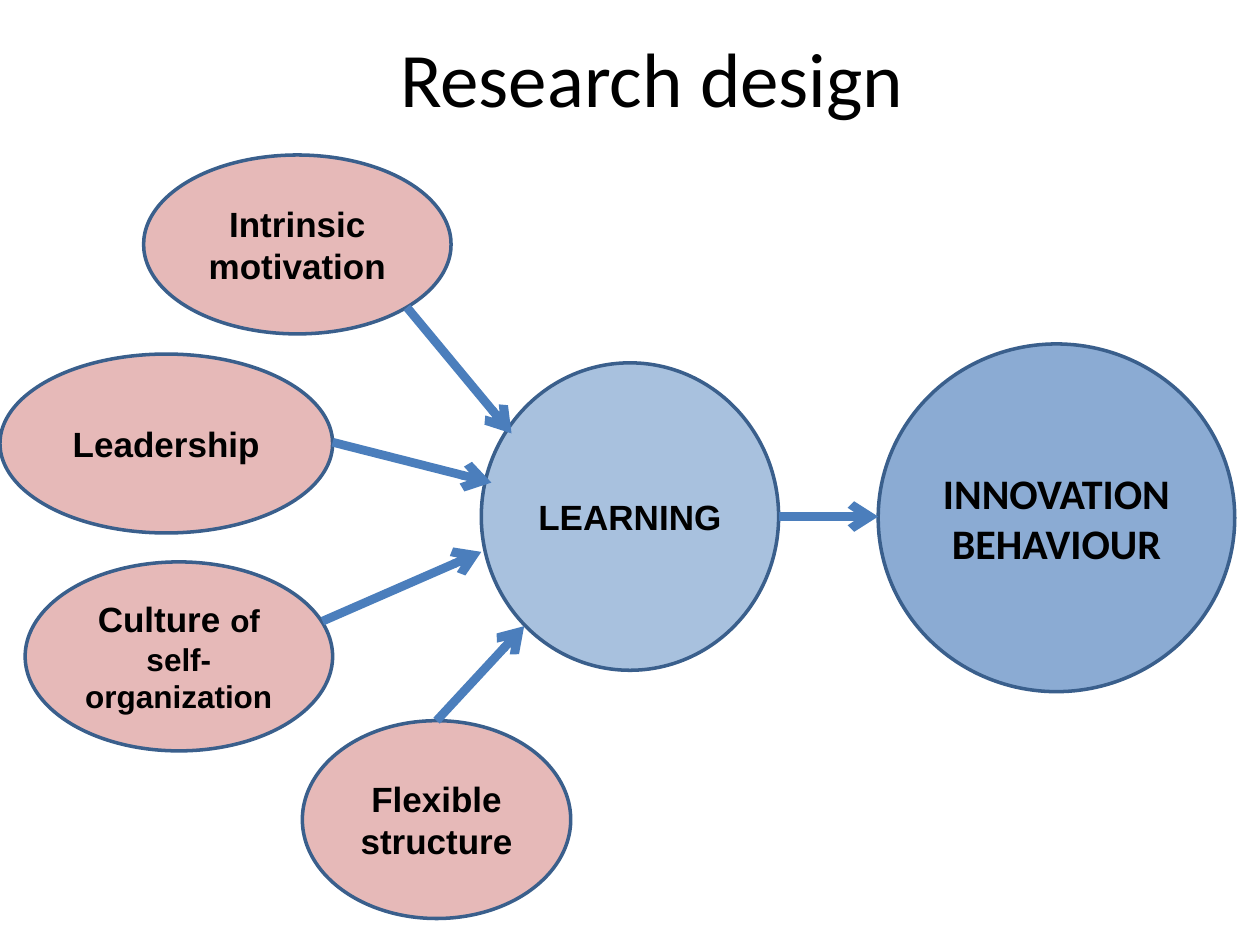
from dataclasses import dataclass
from typing import Optional

from lxml import etree
from pptx import Presentation
from pptx import util as u
from pptx.dml.color import RGBColor
from pptx.enum import shapes, text
from pptx.oxml.ns import qn

COLORS = {
    "ink": "000000",
    "factor": "E6B9B8",
    "outcome": "4F81BD",
    "outline": "3A5F8C",
    "arrow": "4B7EBC",
}
TOP = 0


@dataclass
class Bubble:
    name: str
    box: tuple[float, float, float, float]
    runs: list[tuple[str, int]]
    fill: str = "factor"
    opacity: Optional[int] = None
    font: str = "Arial"


@dataclass
class Arrow:
    start: tuple[float, float]
    end: tuple[float, float]
    from_top_of: Optional[str] = None


BUBBLES = [
    Bubble("motivation", (1.14, 1.23, 2.44, 1.42), [("Intrinsic motivation", 20)]),
    Bubble("leadership", (0, 2.81, 2.64, 1.42), [("Leadership", 20)]),
    Bubble("culture", (0.2, 4.46, 2.44, 1.5), [("Culture ", 20), ("of self-organization", 18)]),
    Bubble("structure", (2.4, 5.72, 2.13, 1.57), [("Flexible structure", 20)]),
    Bubble("learning", (3.82, 2.88, 2.36, 2.44), [("LEARNING", 20)], "outcome", 49),
    Bubble("innovation", (6.97, 2.73, 2.83, 2.76), [("INNOVATION BEHAVIOUR", 24)],
           "outcome", 66, "Calibri"),
]

ARROWS = [
    Arrow((3.23, 2.44), (4.06, 3.44)),
    Arrow((2.64, 3.51), (3.9, 3.83)),
    Arrow((2.56, 4.93), (3.82, 4.38)),
    Arrow((3.46, 5.72), (4.16, 4.97), "structure"),
    Arrow((6.18, 4.1), (6.97, 4.1)),
]


def color(key: str) -> RGBColor:
    return RGBColor.from_string(COLORS[key])


def write(shape, runs: list[tuple[str, int]], *, font: str, bold: bool = False) -> None:
    frame = shape.text_frame
    frame.word_wrap = True
    frame.vertical_anchor = text.MSO_ANCHOR.MIDDLE
    paragraph = frame.paragraphs[0]
    paragraph.alignment = text.PP_ALIGN.CENTER
    for words, size in runs:
        run = paragraph.add_run()
        run.text = words
        run.font.name = font
        run.font.size = u.Pt(size)
        run.font.bold = bold
        run.font.color.rgb = color("ink")


def draw_bubble(slide, bubble: Bubble):
    ellipse = slide.shapes.add_shape(shapes.MSO_SHAPE.OVAL, *map(u.Inches, bubble.box))
    ellipse.shadow.inherit = False
    ellipse.fill.solid()
    ellipse.fill.fore_color.rgb = color(bubble.fill)
    if bubble.opacity is not None:
        tint = ellipse.fill._xPr.find(".//" + qn("a:srgbClr"))
        etree.SubElement(tint, qn("a:alpha"), val=str(bubble.opacity * 1000))
    ellipse.line.color.rgb = color("outline")
    ellipse.line.width = u.Pt(2)
    write(ellipse, bubble.runs, font=bubble.font, bold=True)
    return ellipse


def draw_arrow(slide, arrow: Arrow, ellipses: dict) -> None:
    link = slide.shapes.add_connector(
        shapes.MSO_CONNECTOR.STRAIGHT, *map(u.Inches, arrow.start + arrow.end))
    link.line.color.rgb = color("arrow")
    link.line.width = u.Pt(5)
    etree.SubElement(link.line._get_or_add_ln(), qn("a:tailEnd"), type="arrow")
    etree.SubElement(link._element.spPr, qn("a:effectLst"))
    if arrow.from_top_of:
        link.begin_connect(ellipses[arrow.from_top_of], TOP)


def main() -> None:
    deck = Presentation()
    deck.slide_width, deck.slide_height = u.Inches(10), u.Inches(7.5)
    slide = deck.slides.add_slide(deck.slide_layouts[6])
    title = slide.shapes.add_textbox(*map(u.Inches, (0.59, 0.13, 9.17, 0.96)))
    write(title, [("Research design", 44)], font="Calibri")
    ellipses = {bubble.name: draw_bubble(slide, bubble) for bubble in BUBBLES}
    for arrow in ARROWS:
        draw_arrow(slide, arrow, ellipses)
    deck.save("out.pptx")


if __name__ == "__main__":
    main()
